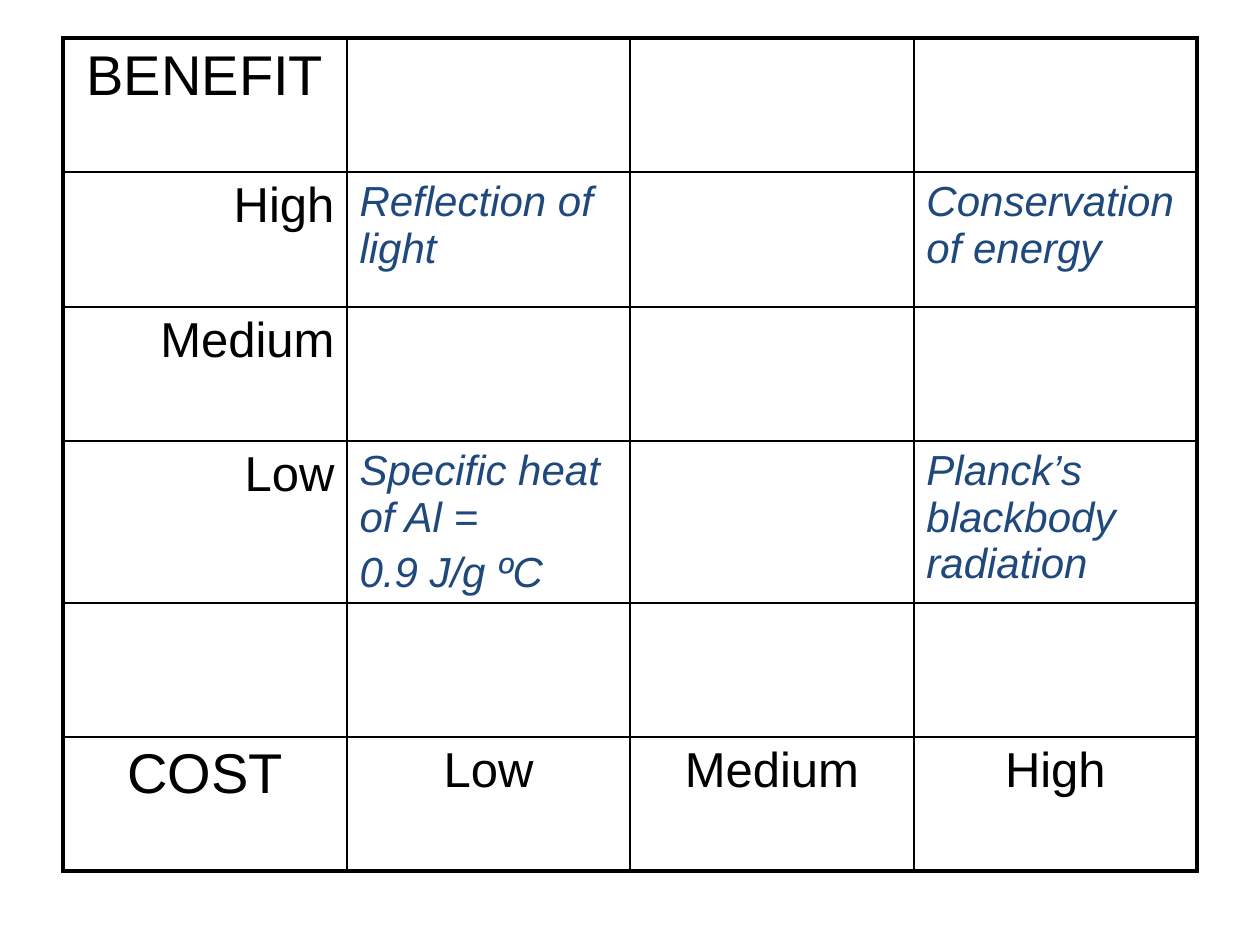
from lxml.etree import SubElement
from pptx import Presentation
from pptx.dml.color import RGBColor
from pptx.enum.text import PP_ALIGN as AL
from pptx.oxml.ns import qn
from pptx.util import Pt

PX = 914400 // 126
BLACK, BLUE = "000000", "1F497D"
THIN, THICK = 1, 2.25
STYLES = {
    "title": (32, BLACK, False, AL.CENTER),
    "level": (28, BLACK, False, AL.RIGHT),
    "scale": (28, BLACK, False, AL.CENTER),
    "example": (24, BLUE, True, AL.LEFT),
}
ROWS = [
    [("title", "BENEFIT"), None, None, None],
    [("level", "High"), ("example", "Reflection of light"), None,
     ("example", "Conservation of energy")],
    [("level", "Medium"), None, None, None],
    [("level", "Low"), ("example", "Specific heat of Al =", "0.9 J/g ºC"), None,
     ("example", "Planck’s blackbody radiation")],
    [None, None, None, None],
    [("title", "COST"), ("scale", "Low"), ("scale", "Medium"), ("scale", "High")],
]
LEFT, TOP = 63, 38
WIDTHS = [284, 283] * 2
HEIGHTS = [134, 135, 134, 162, 134, 134]


def rgb(color):
    return RGBColor.from_string(color)


def set_borders(cell, widths):
    tc_pr = cell._tc.get_or_add_tcPr()
    for side, width in widths.items():
        ln = SubElement(tc_pr, qn(f"a:ln{side}"), w=str(Pt(width)))
        fill = SubElement(ln, qn("a:solidFill"))
        SubElement(fill, qn("a:srgbClr"), val=BLACK)


def write_cell(cell, style, *lines):
    size, color, italic, align = STYLES[style]
    tf = cell.text_frame
    for i, line in enumerate(lines):
        p = tf.add_paragraph() if i else tf.paragraphs[0]
        p.alignment = align
        if i:
            p.space_before = Pt(size * 0.2)
        r = p.add_run()
        r.text = line
        r.font.name = "Arial"
        r.font.size = Pt(size)
        r.font.italic = italic
        r.font.color.rgb = rgb(color)


def main():
    prs = Presentation()
    prs.slide_width, prs.slide_height = 1260 * PX, 945 * PX
    s = prs.slides.add_slide(prs.slide_layouts[6])
    table = s.shapes.add_table(
        len(ROWS), len(WIDTHS), LEFT * PX, TOP * PX,
        sum(WIDTHS) * PX, sum(HEIGHTS) * PX).table
    table.first_row = table.horz_banding = False
    for column, width in zip(table.columns, WIDTHS):
        column.width = width * PX
    for row, height in zip(table.rows, HEIGHTS):
        row.height = height * PX

    last_row, last_col = len(ROWS) - 1, len(WIDTHS) - 1
    for y, row in enumerate(ROWS):
        for x, content in enumerate(row):
            cell = table.cell(y, x)
            set_borders(cell, {
                "L": THICK if x == 0 else THIN,
                "R": THICK if x == last_col else THIN,
                "T": THICK if y == 0 else THIN,
                "B": THICK if y == last_row else THIN,
            })
            cell.fill.background()
            if content:
                write_cell(cell, *content)
    prs.save("out.pptx")


if __name__ == "__main__":
    main()
